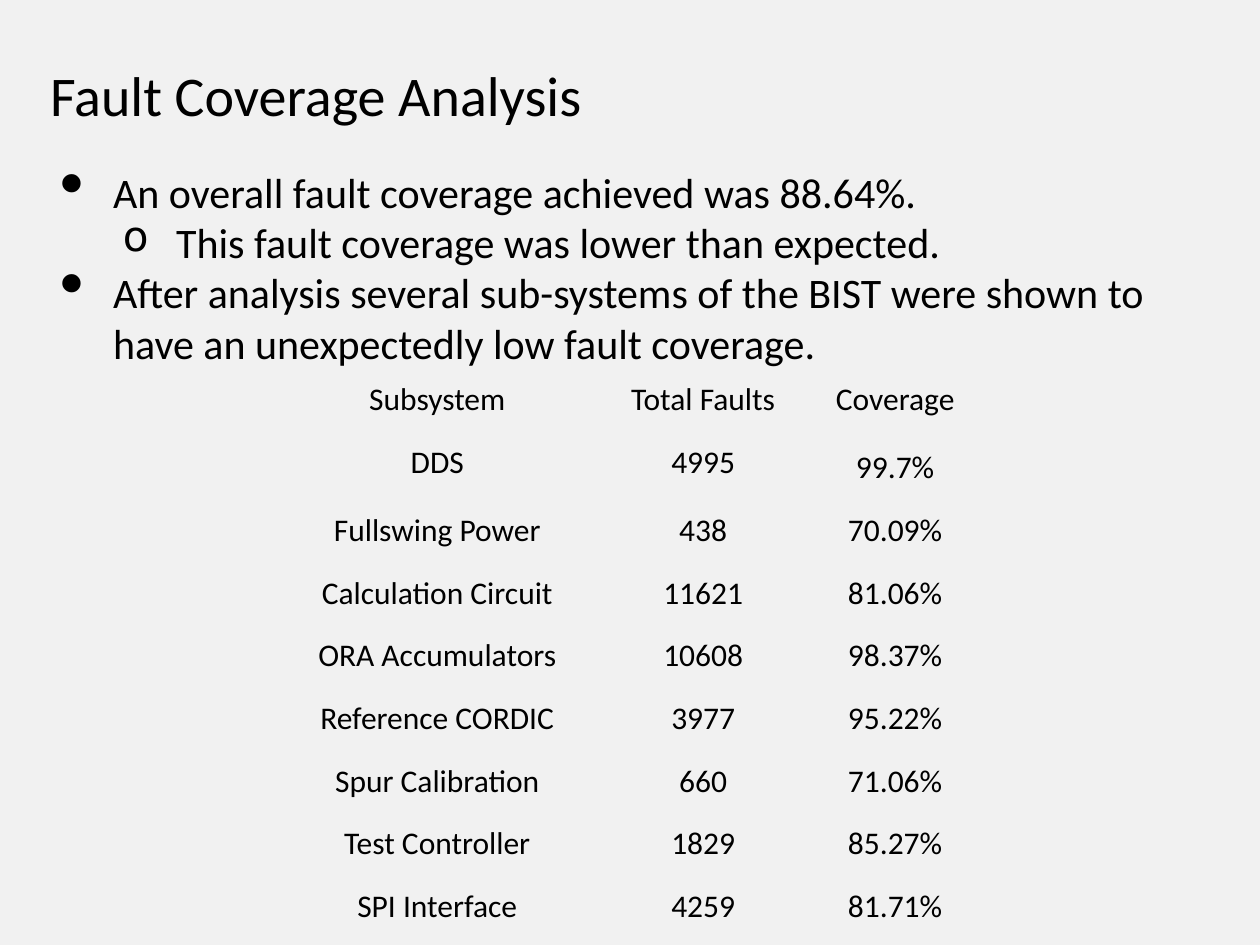
"""Build the fault coverage analysis slide with its bullets and subsystem table."""
from dataclasses import dataclass

from lxml.etree import SubElement
from pptx import Presentation
from pptx.dml.color import RGBColor as RGB
from pptx.enum.text import MSO_ANCHOR as ANCHOR, PP_ALIGN as ALIGN
from pptx.oxml.ns import qn
from pptx.util import Cm, Pt


@dataclass(frozen=True)
class Theme:
    font: str = "Calibri"
    ink: str = "000000"
    background: str = "F1F1F1"
    title: int = 32
    body: int = 24
    cell: int = 18


theme = Theme()
inset = Cm(0.25)
NO_STYLE = "{2D5ABB26-0587-4C30-8999-92F81FD0307C}"


def add_run(p, text, size):
    r = p.add_run()
    r.text = text
    r.font.name = theme.font
    r.font.size = Pt(size)
    r.font.color.rgb = RGB.from_string(theme.ink)


def add_box(s, top, height, anchor):
    tf = s.shapes.add_textbox(Cm(0.76), top, Cm(23.88), height).text_frame
    tf.word_wrap = True
    tf.vertical_anchor = anchor
    tf.margin_left = tf.margin_right = tf.margin_top = tf.margin_bottom = inset
    return tf


prs = Presentation()
prs.slide_width, prs.slide_height = Cm(25.4), Cm(19.05)
s = prs.slides.add_slide(prs.slide_layouts[6])
s.background.fill.solid()
s.background.fill.fore_color.rgb = RGB.from_string(theme.background)

bullets = [
    (0, "An overall fault coverage achieved was 88.64%."),
    (1, "This fault coverage was lower than expected."),
    (0, "After analysis several sub-systems of the BIST were shown to "
        "have an unexpectedly low fault coverage."),
]
marks = [("•", 167), ("o", 100)]
tf = add_box(s, Cm(3.1), Cm(4.34), ANCHOR.TOP)
for i, (level, text) in enumerate(bullets):
    p = tf.add_paragraph() if i else tf.paragraphs[0]
    p.level = level
    char, percent = marks[level]
    pPr = p._p.get_or_add_pPr()
    pPr.set("marL", str(Cm(1.27 * (level + 1))))
    pPr.set("indent", str(Cm(-1.07)))
    SubElement(SubElement(pPr, qn("a:buClr")), qn("a:srgbClr"), val=theme.ink)
    SubElement(pPr, qn("a:buSzPct"), val=str(percent * 1000))
    SubElement(pPr, qn("a:buChar"), char=char)
    add_run(p, text, theme.body)

tf = add_box(s, Cm(0.76), Cm(2.29), ANCHOR.MIDDLE)
add_run(tf.paragraphs[0], "Fault Coverage Analysis", theme.title)

rows = [
    ("Subsystem", "Total Faults", "Coverage"),
    ("DDS", "4995", "99.7%"),
    ("Fullswing Power", "438", "70.09%"),
    ("Calculation Circuit", "11621", "81.06%"),
    ("ORA Accumulators", "10608", "98.37%"),
    ("Reference CORDIC", "3977", "95.22%"),
    ("Spur Calibration", "660", "71.06%"),
    ("Test Controller", "1829", "85.27%"),
    ("SPI Interface", "4259", "81.71%"),
]
widths = [6.71, 4.01, 3.73]
row_height = Cm(1.07)
table = s.shapes.add_table(len(rows), len(widths), Cm(5.46), Cm(7.42),
                           Cm(sum(widths)), row_height * len(rows)).table
table.first_row = table.horz_banding = False
table._tbl.tblPr.find(qn("a:tableStyleId")).text = NO_STYLE
for column, width in zip(table.columns, widths):
    column.width = Cm(width)
for i, values in enumerate(rows):
    table.rows[i].height = row_height
    for j, value in enumerate(values):
        cell = table.cell(i, j)
        cell.fill.background()
        cell.margin_left = cell.margin_right = inset
        cell.margin_top = cell.margin_bottom = inset
        p = cell.text_frame.paragraphs[0]
        p.alignment = ALIGN.CENTER
        if value == "99.7%":
            p.line_spacing = 1.15
        add_run(p, value, theme.cell)

prs.save("out.pptx")
